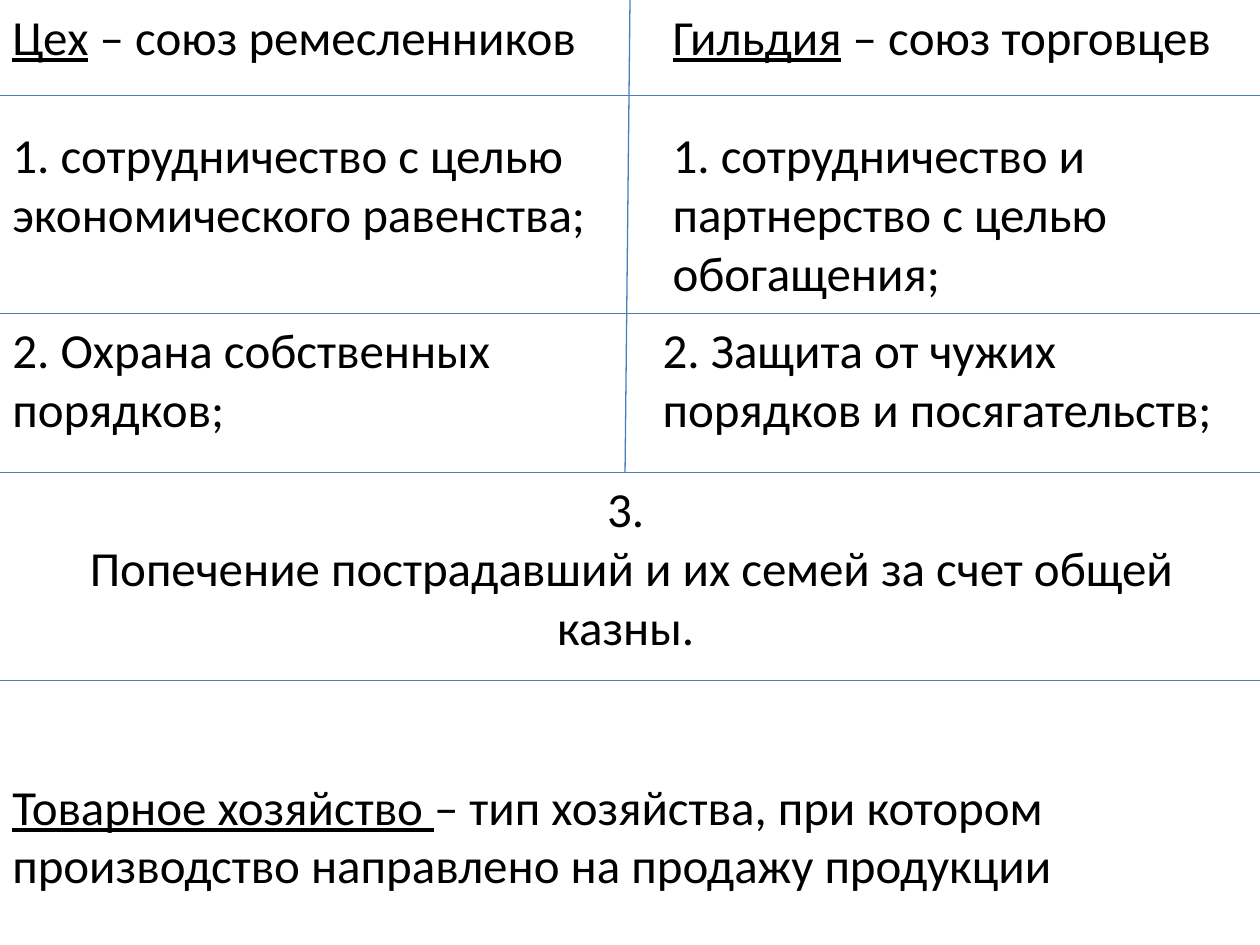
from lxml import etree
from pptx import Presentation
from pptx import util as u
from pptx.dml.color import RGBColor
from pptx.enum import shapes, text
from pptx.oxml import ns

BLACK = RGBColor(0x00, 0x00, 0x00)
BLUE = RGBColor(0x4B, 0x7E, 0xBC)
PAGE_WIDTH, PAGE_HEIGHT = 25.4, 19.05
BODY = {"name": "Calibri", "size": u.Pt(28)}
LINE_GAP = u.Pt(34)


def apply_format(target, values):
    """Set each named attribute on the target."""
    for name, value in values.items():
        setattr(target, name, value)


def add_rule(page, start, end):
    """Draw a thin blue line between two points in centimetres."""
    rule = page.shapes.add_connector(
        shapes.MSO_CONNECTOR.STRAIGHT, *(u.Cm(value) for value in start + end))
    rule.line.color.rgb = BLUE
    rule.line.width = u.Pt(0.75)
    etree.SubElement(rule.element.spPr, ns.qn("a:effectLst"))


def add_text(page, left, top, width, height, paragraphs):
    """Place paragraphs given as (format, term, remainder) in a wrapping box."""
    box = page.shapes.add_textbox(*map(u.Cm, (left, top, width, height)))
    frame = box.text_frame
    apply_format(frame, {"word_wrap": True,
                         "auto_size": text.MSO_AUTO_SIZE.SHAPE_TO_FIT_TEXT})
    for index, (layout, term, remainder) in enumerate(paragraphs):
        para = frame.add_paragraph() if index else frame.paragraphs[0]
        apply_format(para, layout)
        for words, underline in ((term, True), (remainder, False)):
            if words:
                span = para.add_run()
                span.text = words
                apply_format(span.font, BODY | {"underline": underline})
                span.font.color.rgb = BLACK


def add_comparison(page, left, top, width, height):
    """Compare the craft union with the merchant union in two columns."""
    second_row = top + 6.32
    spaced = {"space_before": LINE_GAP}
    add_text(page, left, top, 12.7, 5.05, [
        ({}, "Цех", " – союз ремесленников"),
        (spaced, "", "1. сотрудничество с целью экономического равенства;")])
    add_text(page, left + 13.31, top, width - 13.31, 6.25, [
        ({}, "Гильдия", " – союз торговцев"),
        (spaced, "", "1. сотрудничество и партнерство с целью обогащения;")])
    add_text(page, left, second_row, 10.49, 2.64,
             [({}, "", "2. Охрана собственных порядков;")])
    add_text(page, left + 13.11, second_row, width - 13.11, 2.64,
             [({}, "", "2. Защита от чужих порядков и посягательств;")])
    middle = left + width / 2
    add_rule(page, (middle, top), (middle - 0.1, top + height))
    for y in (top + 1.93, second_row, top + height):
        add_rule(page, (left, y), (left + width, y))


def add_shared_duty(page, left, top, width, height):
    """Show the duty common to both unions, closed by a rule."""
    centred = {"alignment": text.PP_ALIGN.CENTER}
    add_text(page, left + 0.51, top, width - 1.19, 3.84, [
        (centred, "", "3."),
        (centred, "", " Попечение пострадавший и их семей за счет общей казны.")])
    add_rule(page, (left, top + height), (left + width, top + height))


def add_definition(page, left, top, width, height):
    """Define the commodity economy."""
    add_text(page, left, top, width, height, [
        ({}, "Товарное хозяйство ",
         "– тип хозяйства, при котором производство направлено на продажу продукции")])


def main():
    """Build and save the slide."""
    deck = Presentation()
    apply_format(deck, {"slide_width": u.Cm(PAGE_WIDTH),
                        "slide_height": u.Cm(PAGE_HEIGHT)})
    page = deck.slides.add_slide(deck.slide_layouts[6])
    add_comparison(page, 0, 0, PAGE_WIDTH, 9.53)
    add_shared_duty(page, 0, 9.53, PAGE_WIDTH, 4.19)
    add_definition(page, 0, 15.52, PAGE_WIDTH, 2.64)
    deck.save("out.pptx")


if __name__ == "__main__":
    main()
